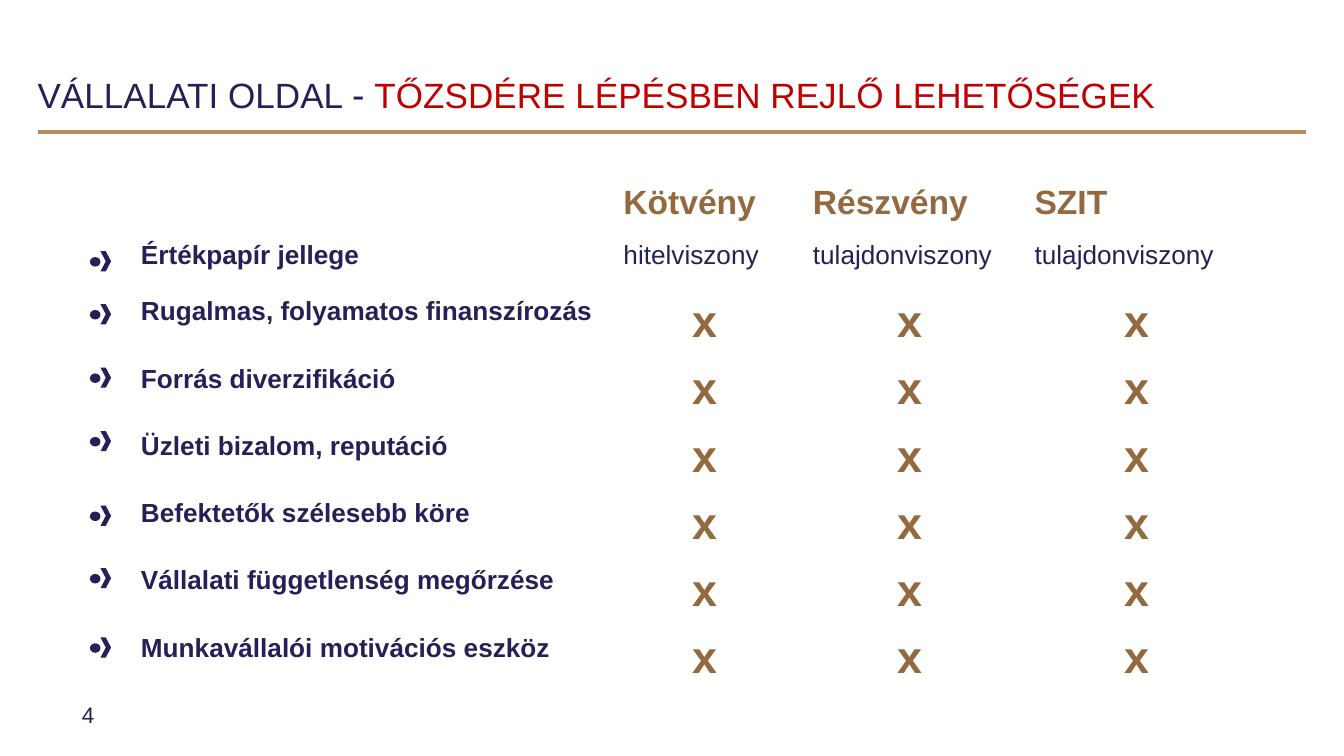
import pptx
import pptx.util
import pptx.dml.color
import pptx.enum.shapes
import pptx.enum.text
import pptx.oxml
import pptx.oxml.ns
import lxml.etree

Cm, Pt = pptx.util.Cm, pptx.util.Pt
SHAPE = pptx.enum.shapes.MSO_SHAPE
MIDDLE = pptx.enum.text.MSO_ANCHOR.MIDDLE
NAVY, BRONZE, GOLD, RED, WHITE = "232157", "93693F", "BA8C5D", "C00000", "FFFFFF"


def rgb(color):
    return pptx.dml.color.RGBColor.from_string(color)


def set_font(font, size, color, bold=False):
    font.name = "Arial"
    font.size = Pt(size)
    font.bold = bold
    font.color.rgb = rgb(color)


deck = pptx.Presentation()
deck.slide_width, deck.slide_height = Cm(25.4), Cm(14.29)
slide = deck.slides.add_slide(deck.slide_layouts[6])
shapes = slide.shapes

# Title and rule
rule = shapes.add_connector(
    pptx.enum.shapes.MSO_CONNECTOR.STRAIGHT, Cm(0.71), Cm(2.49), Cm(24.69), Cm(2.49))
rule.line.color.rgb = rgb(GOLD)
rule.line.width = Pt(2)
lxml.etree.SubElement(rule._element.spPr, pptx.oxml.ns.qn("a:effectLst"))

title = shapes.add_textbox(Cm(0.71), Cm(1.14), Cm(21.59), Cm(0.97)).text_frame
title.word_wrap = True
title.margin_left = 0
title.margin_top = Cm(0.2)
for text, size, color in [
    ("VÁLLALATI OLDAL ", 18.8, NAVY),
    ("-", 20, NAVY),
    (" ", 18.8, NAVY),
    ("TŐZSDÉRE LÉPÉSBEN REJLŐ LEHETŐSÉGEK", 18.8, RED),
]:
    run = title.paragraphs[0].add_run()
    run.text = text
    set_font(run.font, size, color)

# Page number
page_number = shapes.add_textbox(Cm(1.3), Cm(13.13), Cm(5.92), Cm(0.76)).text_frame
page_number.word_wrap = True
page_number.vertical_anchor = MIDDLE
page_number.text = "4"
set_font(page_number.paragraphs[0].font, 12, NAVY)

# Comparison of the securities
benefits = [
    "Rugalmas, folyamatos finanszírozás",
    "Forrás diverzifikáció",
    "Üzleti bizalom, reputáció",
    "Befektetők szélesebb köre",
    "Vállalati függetlenség megőrzése",
    "Munkavállalói motivációs eszköz",
]
rows = [
    ["", "Kötvény", "Részvény", "SZIT"],
    ["Értékpapír jellege", "hitelviszony", "tulajdonviszony", "tulajdonviszony"],
] + [[benefit, "x", "x", "x"] for benefit in benefits]
column_widths = [9.12, 3.58, 4.19, 4.39]
row_heights = [1.07, 1.07, 0.97] + [1.07] * 5

comparison = shapes.add_table(
    len(rows), len(column_widths), Cm(2.41), Cm(3.35),
    Cm(sum(column_widths)), Cm(sum(row_heights))).table
for column, width in zip(comparison.columns, column_widths):
    column.width = Cm(width)
for row, height in zip(comparison.rows, row_heights):
    row.height = Cm(height)

for row_index, row_texts in enumerate(rows):
    for column_index, text in enumerate(row_texts):
        cell = comparison.cell(row_index, column_index)
        cell.text = text
        paragraph = cell.text_frame.paragraphs[0]
        if row_index == 0:
            set_font(paragraph.font, 18, BRONZE, bold=True)
        elif text == "x":
            paragraph.alignment = pptx.enum.text.PP_ALIGN.CENTER
            set_font(paragraph.font, 24, BRONZE, bold=True)
        else:
            set_font(paragraph.font, 14, NAVY, bold=column_index == 0)

        cell_properties = cell._tc.get_or_add_tcPr()
        for side in "LRTB":
            width = Pt(3 if row_index == 0 and side == "B" else 1)
            cell_properties.append(pptx.oxml.parse_xml(
                f'<a:ln{side} {pptx.oxml.ns.nsdecls("a")} w="{width}"><a:solidFill>'
                f'<a:srgbClr val="{WHITE}"/></a:solidFill></a:ln{side}>'))
        cell.fill.background()

# Row markers: a dot followed by a chevron
for top in [4.75, 5.75, 6.95, 8.15, 9.56, 10.74, 12.05]:
    marker = shapes.add_group_shape()
    for preset, left, offset, height in [
        (SHAPE.CHEVRON, 1.9, 0, 0.38),
        (SHAPE.OVAL, 1.7, 0.11, 0.18),
    ]:
        part = marker.shapes.add_shape(
            preset, Cm(left), Cm(top + offset), Cm(0.2), Cm(height))
        part.shadow.inherit = False
        part.fill.solid()
        part.fill.fore_color.rgb = rgb(NAVY)
        part.line.fill.background()

deck.save("out.pptx")
